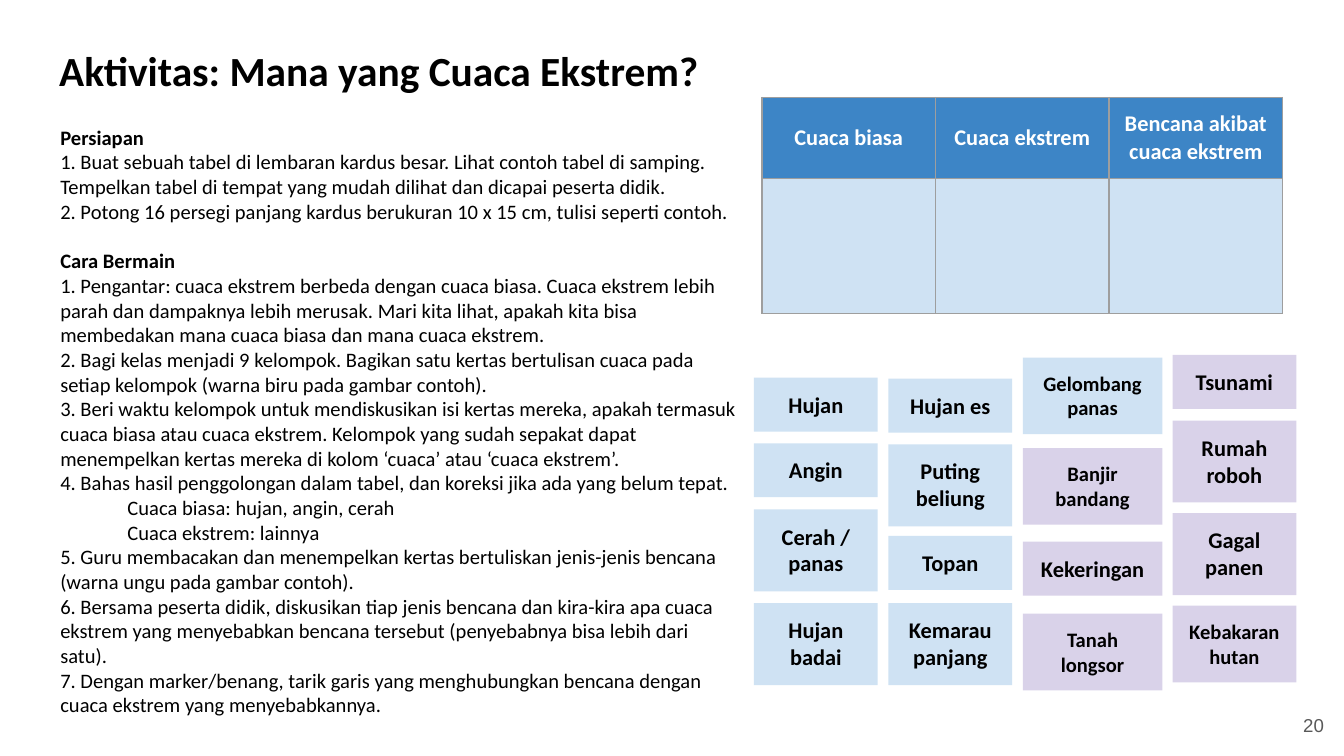
from lxml import etree
from pptx import Presentation
from pptx import util as u
from pptx.dml.color import RGBColor
from pptx.enum import shapes, text
from pptx.oxml.ns import qn

BLACK, WHITE, GRAY = "000000", "FFFFFF", "595959"
HEADER_BLUE, BLUE, PURPLE, BORDER = "3D85C6", "CFE2F3", "D9D2E9", "9E9E9E"
INSET = u.Cm(0.25)
CARD_HEIGHTS = {(12, 1): 1.02, (12, 2): 1.55, (11, 2): 1.45}

INSTRUCTIONS = [
    ("Persiapan", [
        "1. Buat sebuah tabel di lembaran kardus besar. Lihat contoh tabel di samping. "
        "Tempelkan tabel di tempat yang mudah dilihat dan dicapai peserta didik.",
        "2. Potong 16 persegi panjang kardus berukuran 10 x 15 cm, tulisi seperti contoh.",
    ]),
    ("Cara Bermain", [
        "1. Pengantar: cuaca ekstrem berbeda dengan cuaca biasa. Cuaca ekstrem lebih parah "
        "dan dampaknya lebih merusak. Mari kita lihat, apakah kita bisa membedakan mana "
        "cuaca biasa dan mana cuaca ekstrem.",
        "2. Bagi kelas menjadi 9 kelompok. Bagikan satu kertas bertulisan cuaca pada setiap "
        "kelompok (warna biru pada gambar contoh).",
        "3. Beri waktu kelompok untuk mendiskusikan isi kertas mereka, apakah termasuk cuaca "
        "biasa atau cuaca ekstrem. Kelompok yang sudah sepakat dapat menempelkan kertas "
        "mereka di kolom ‘cuaca’ atau ‘cuaca ekstrem’.",
        "4. Bahas hasil penggolongan dalam tabel, dan koreksi jika ada yang belum tepat.",
        "\tCuaca biasa: hujan, angin, cerah",
        "\tCuaca ekstrem: lainnya",
        "5. Guru membacakan dan menempelkan kertas bertuliskan jenis-jenis bencana "
        "(warna ungu pada gambar contoh).",
        "6. Bersama peserta didik, diskusikan tiap jenis bencana dan kira-kira apa cuaca "
        "ekstrem yang menyebabkan bencana tersebut (penyebabnya bisa lebih dari satu).",
        "7. Dengan marker/benang, tarik garis yang menghubungkan bencana dengan cuaca "
        "ekstrem yang menyebabkannya.",
    ]),
]

CARD_COLUMNS = [
    (14.25, 2.34, [("Hujan", 7.14, 12, 1, BLUE), ("Angin", 8.38, 12, 1, BLUE),
                   ("Cerah / panas", 9.63, 12, 2, BLUE), ("Hujan badai", 11.4, 12, 2, BLUE)]),
    (16.79, 2.34, [("Hujan es", 7.16, 12, 1, BLUE), ("Puting beliung", 8.4, 12, 2, BLUE),
                   ("Topan", 10.13, 12, 1, BLUE), ("Kemarau panjang", 11.4, 12, 2, BLUE)]),
    (19.33, 2.64, [("Gelombang panas", 6.76, 11, 2, BLUE), ("Banjir bandang", 8.47, 11, 2, PURPLE),
                   ("Kekeringan", 10.24, 12, 1, PURPLE), ("Tanah longsor", 11.6, 11, 2, PURPLE)]),
    (22.16, 2.34, [("Tsunami", 6.71, 12, 1, PURPLE), ("Rumah roboh", 7.95, 12, 2, PURPLE),
                   ("Gagal panen", 9.7, 12, 2, PURPLE), ("Kebakaran hutan", 11.45, 11, 2, PURPLE)]),
]


def color(hex_value):
    """Turn a hex string into a colour."""
    return RGBColor.from_string(hex_value)


def add_run(paragraph, words, size, hex_value=BLACK, bold=False, font="Calibri"):
    """Append one formatted run to a paragraph."""
    run = paragraph.add_run()
    run.text = words
    run.font.name = font
    run.font.size = u.Pt(size)
    run.font.bold = bold
    run.font.color.rgb = color(hex_value)


def prepare_frame(shape, anchor=text.MSO_ANCHOR.TOP):
    """Set wrapping, insets and anchor, and return the text frame."""
    frame = shape.text_frame
    frame.word_wrap = True
    frame.vertical_anchor = anchor
    frame.margin_left = frame.margin_right = INSET
    frame.margin_top = frame.margin_bottom = INSET
    return frame


def add_text_box(slide, left, top, width, height, anchor=text.MSO_ANCHOR.TOP):
    """Add an empty text box and return its text frame."""
    box = slide.shapes.add_textbox(u.Cm(left), u.Cm(top), u.Cm(width), u.Cm(height))
    return prepare_frame(box, anchor)


def add_instructions(slide):
    """Add the headed sections of instructions."""
    frame = add_text_box(slide, 0.89, 2.11, 13.34, 11.33)
    paragraph = frame.paragraphs[0]
    for number, (heading, steps) in enumerate(INSTRUCTIONS):
        if number:
            paragraph = frame.add_paragraph()
            paragraph.space_before = u.Pt(13.4)
        add_run(paragraph, heading, 11, bold=True)
        for step in steps:
            add_run(frame.add_paragraph(), step, 11)


def add_card(slide, left, width, label, top, size, lines, fill):
    """Add one coloured word card."""
    card = slide.shapes.add_shape(
        shapes.MSO_SHAPE.RECTANGLE, u.Cm(left), u.Cm(top),
        u.Cm(width), u.Cm(CARD_HEIGHTS[size, lines]))
    card.shadow.inherit = False
    card.fill.solid()
    card.fill.fore_color.rgb = color(fill)
    card.line.fill.background()
    paragraph = prepare_frame(card).paragraphs[0]
    paragraph.alignment = text.PP_ALIGN.CENTER
    add_run(paragraph, label, size, bold=True)


def style_cell(cell, fill):
    """Give a table cell its borders and fill."""
    properties = cell._tc.get_or_add_tcPr()
    for side in ("lnL", "lnR", "lnT", "lnB"):
        line = etree.SubElement(properties, qn(f"a:{side}"), w=str(u.Pt(0.75)))
        solid = etree.SubElement(line, qn("a:solidFill"))
        etree.SubElement(solid, qn("a:srgbClr"), val=BORDER)
    cell.fill.solid()
    cell.fill.fore_color.rgb = color(fill)


def add_sorting_table(slide):
    """Add the table with three headings and an empty row."""
    headings = ["Cuaca biasa", "Cuaca ekstrem", "Bencana akibat cuaca ekstrem"]
    table = slide.shapes.add_table(
        2, 3, u.Cm(14.4), u.Cm(1.84), u.Cm(9.84), u.Cm(4.08)).table
    table.rows[0].height = u.Cm(1.53)
    table.rows[1].height = u.Cm(2.55)
    for column, heading in enumerate(headings):
        table.columns[column].width = u.Cm(3.28)
        header = table.cell(0, column)
        style_cell(header, HEADER_BLUE)
        style_cell(table.cell(1, column), BLUE)
        header.vertical_anchor = text.MSO_ANCHOR.MIDDLE
        header.margin_left = header.margin_right = INSET
        header.margin_top = header.margin_bottom = INSET
        paragraph = header.text_frame.paragraphs[0]
        paragraph.alignment = text.PP_ALIGN.CENTER
        add_run(paragraph, heading, 12, WHITE, bold=True)


def main():
    """Build and save the activity slide."""
    presentation = Presentation()
    presentation.slide_width = u.Cm(25.4)
    presentation.slide_height = u.Cm(14.29)
    slide = presentation.slides.add_slide(presentation.slide_layouts[6])

    title = add_text_box(slide, 0.87, 0.61, 23.67, 1.6)
    add_run(title.paragraphs[0], "Aktivitas: Mana yang Cuaca Ekstrem?", 22.2, bold=True)
    add_instructions(slide)
    add_sorting_table(slide)
    for left, width, cards in CARD_COLUMNS:
        for card in cards:
            add_card(slide, left, width, *card)

    page = add_text_box(slide, 23.75, 13.16, 1.52, 1.09, text.MSO_ANCHOR.MIDDLE)
    page.paragraphs[0].alignment = text.PP_ALIGN.RIGHT
    add_run(page.paragraphs[0], "20", 10, GRAY, font="Arial")
    presentation.save("out.pptx")


if __name__ == "__main__":
    main()
